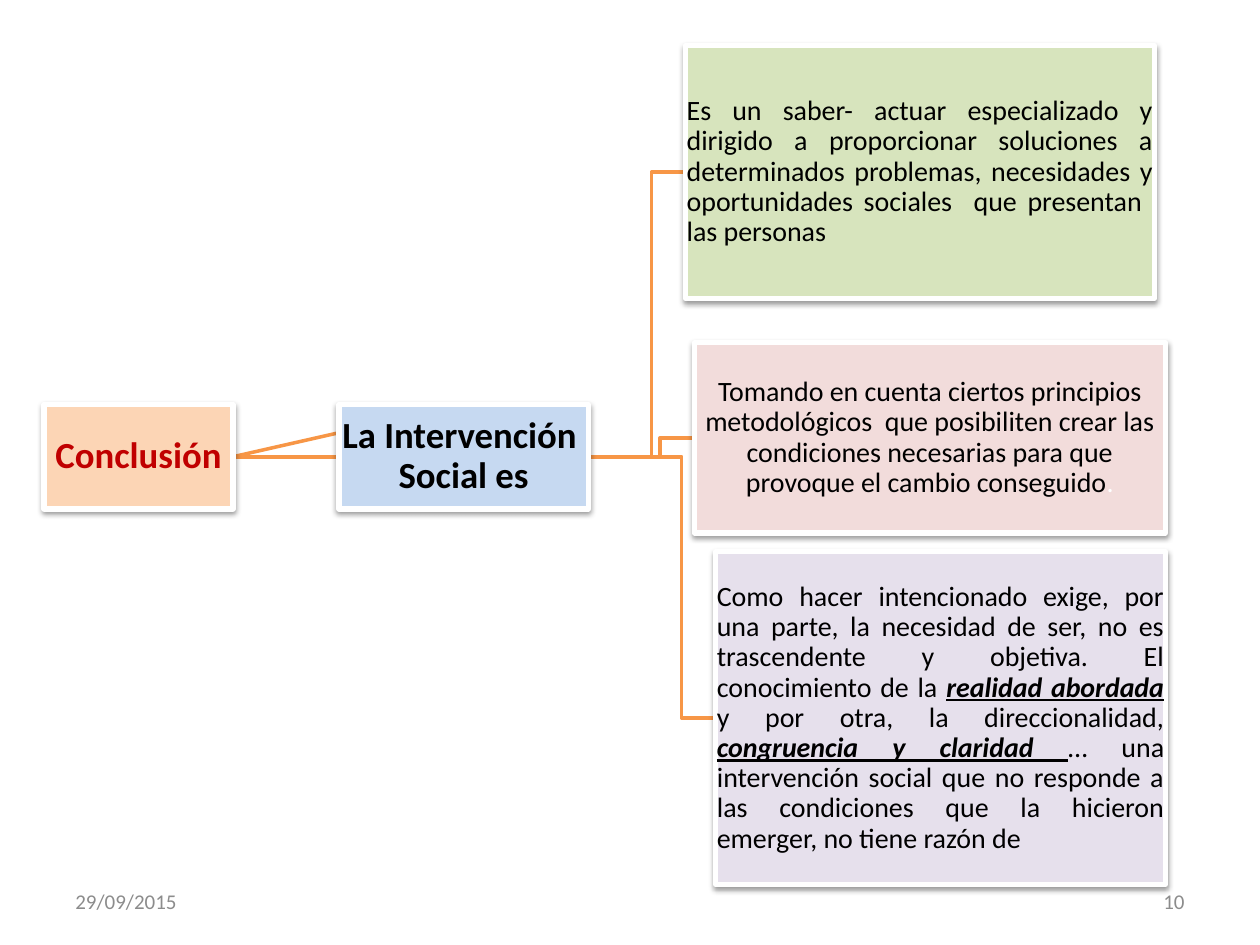
from dataclasses import dataclass

from lxml import etree
from pptx import Presentation
from pptx.dml.color import RGBColor
from pptx.enum.shapes import MSO_CONNECTOR, MSO_SHAPE
from pptx.enum.text import MSO_ANCHOR, PP_ALIGN
from pptx.oxml import parse_xml
from pptx.oxml.ns import nsdecls, qn
from pptx.util import Inches, Pt

STRAIGHT = MSO_CONNECTOR.STRAIGHT
RECTANGLE = MSO_SHAPE.RECTANGLE
MIDDLE = MSO_ANCHOR.MIDDLE
LEFT, CENTER, RIGHT, JUSTIFY = (
    PP_ALIGN.LEFT, PP_ALIGN.CENTER, PP_ALIGN.RIGHT, PP_ALIGN.JUSTIFY)
TOP_SIDE, RIGHT_SIDE = 0, 3

FONT = "Calibri"
ORANGE, WHITE, BLACK, RED, GRAY = "F79646", "FFFFFF", "000000", "C00000", "8C8C8C"
ELBOW_RUN = 0.27
INSET = 0.01
SHADOW = (
    f'<a:outerShdw {nsdecls("a")} blurRad="{Pt(3.1)}" dist="{Pt(1.6)}" '
    'dir="5400000" rotWithShape="0"><a:srgbClr val="000000">'
    '<a:alpha val="38000"/></a:srgbClr></a:outerShdw>')


@dataclass
class Card:
    left: float
    top: float
    width: float
    height: float
    fill: str
    spans: list  # (text, colour, emphasised)
    size: int = 16
    bold: bool = False
    align: PP_ALIGN = CENTER

    @property
    def middle(self):
        return self.top + self.height / 2


ROOT = Card(0.35, 3.21, 1.5, 0.83, "FCD5B5", [("Conclusión", RED, False)], 21, True)
TOPIC = Card(2.69, 3.21, 1.98, 0.83, "C6D9F1",
             [("La Intervención  Social es", BLACK, False)], 21, True)
DETAILS = [
    Card(5.44, 0.36, 3.72, 2.01, "D7E4BD", [
        ("Es un saber- actuar especializado y dirigido a proporcionar soluciones "
         "a determinados problemas, necesidades y oportunidades sociales  que "
         "presentan  las personas", BLACK, False)], align=JUSTIFY),
    Card(5.51, 2.72, 3.74, 1.51, "F2DCDB", [
        ("Tomando en cuenta ciertos principios metodológicos  que posibiliten "
         "crear las condiciones necesarias para que provoque el cambio "
         "conseguido", BLACK, False),
        (".", WHITE, False)]),
    Card(5.68, 4.38, 3.57, 2.64, "E6E0EC", [
        ("Como hacer intencionado exige, por una parte, la necesidad de ser, no es "
         "trascendente y objetiva. El conocimiento de la ", BLACK, False),
        ("realidad abordada ", BLACK, True),
        ("y por otra, la direccionalidad, ", BLACK, False),
        ("congruencia y claridad ", BLACK, True),
        ("… una intervención social que no responde a las condiciones que la "
         "hicieron emerger, no tiene razón de ", BLACK, False)], align=JUSTIFY),
]


def rgb(value):
    return RGBColor.from_string(value)


def style_line(line, colour, width):
    line.color.rgb = rgb(colour)
    line.width = Pt(width)


def style_span(span, size, colour):
    span.font.name = FONT
    span.font.size = Pt(size)
    span.font.color.rgb = rgb(colour)


def add_elbow(page, start, end):
    """Draw an open path that turns shortly before its end."""
    turn = end[0] - ELBOW_RUN
    points = [(turn, start[1]), (turn, end[1]), end]
    builder = page.shapes.build_freeform(Inches(start[0]), Inches(start[1]))
    builder.add_line_segments([(Inches(x), Inches(y)) for x, y in points], close=False)
    elbow = builder.convert_to_shape()
    elbow.fill.background()
    elbow.shadow.inherit = False
    style_line(elbow.line, ORANGE, 2)


def add_straight(page, start, end):
    connector = page.shapes.add_connector(
        STRAIGHT, *(Inches(value) for value in (*start, *end)))
    style_line(connector.line, ORANGE, 2)
    etree.SubElement(connector.element.spPr, qn("a:effectLst"))
    return connector


def add_card(page, card):
    box = page.shapes.add_shape(
        RECTANGLE, Inches(card.left), Inches(card.top),
        Inches(card.width), Inches(card.height))
    box.fill.solid()
    box.fill.fore_color.rgb = rgb(card.fill)
    style_line(box.line, WHITE, 3)
    box.shadow.inherit = False
    box.element.spPr.find(qn("a:effectLst")).append(parse_xml(SHADOW))

    frame = box.text_frame
    frame.word_wrap = True
    frame.vertical_anchor = MIDDLE
    frame.margin_left = frame.margin_right = Inches(INSET)
    frame.margin_top = frame.margin_bottom = Inches(INSET)
    para = frame.paragraphs[0]
    para.alignment = card.align
    para.line_spacing = 0.9
    for text, colour, emphasised in card.spans:
        span = para.add_run()
        span.text = text
        style_span(span, card.size, colour)
        span.font.bold = card.bold or emphasised
        span.font.italic = emphasised
        span.font.underline = emphasised
    return box


def add_footer(page, left, text, align):
    box = page.shapes.add_textbox(Inches(left), Inches(6.95), Inches(2.33), Inches(0.4))
    frame = box.text_frame
    frame.word_wrap = True
    frame.vertical_anchor = MIDDLE
    frame.text = text
    para = frame.paragraphs[0]
    para.alignment = align
    style_span(para.runs[0], 12, GRAY)


def main():
    deck = Presentation()
    deck.slide_width, deck.slide_height = Inches(10), Inches(7.5)
    page = deck.slides.add_slide(deck.slide_layouts[6])

    # Lines come first so that the cards lie over them.
    start = (ROOT.left + ROOT.width, ROOT.middle)
    link = add_straight(page, start, (TOPIC.left + TOPIC.width / 2, TOPIC.top))
    for detail in reversed(DETAILS):
        add_elbow(page, start, (detail.left, detail.middle))

    root_box = add_card(page, ROOT)
    for detail in DETAILS:
        add_card(page, detail)
    topic_box = add_card(page, TOPIC)
    link.begin_connect(root_box, RIGHT_SIDE)
    link.end_connect(topic_box, TOP_SIDE)

    add_footer(page, 0.5, "29/09/2015", LEFT)
    add_footer(page, 7.17, "10", RIGHT)
    deck.save("out.pptx")


if __name__ == "__main__":
    main()
